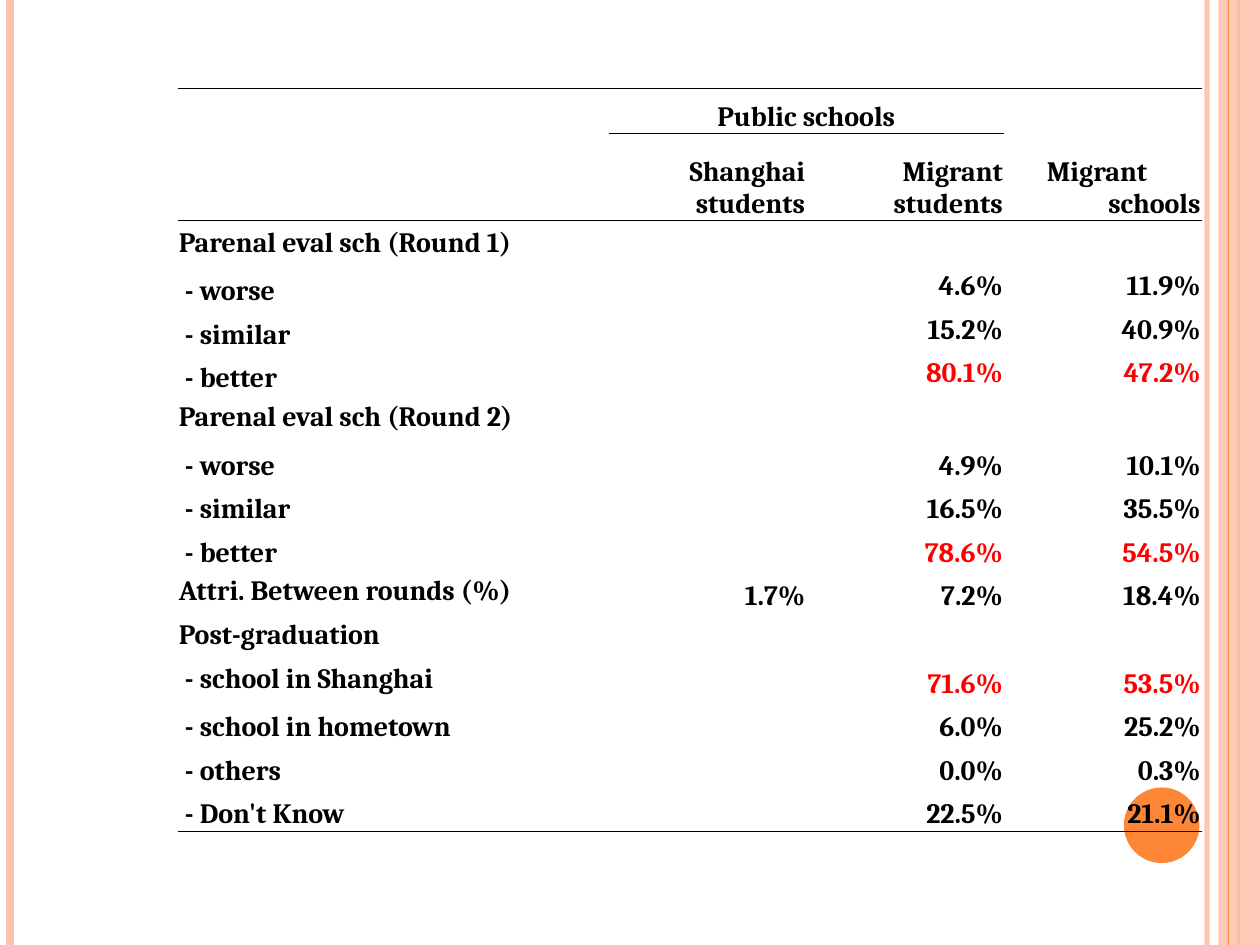
from lxml import etree
from pptx import Presentation
from pptx.dml.color import RGBColor
from pptx.enum.shapes import MSO_CONNECTOR, MSO_SHAPE
from pptx.enum.text import MSO_ANCHOR, PP_ALIGN
from pptx.oxml.ns import qn
from pptx.util import Inches, Pt

STRAIGHT = MSO_CONNECTOR.STRAIGHT
RECTANGLE, OVAL = MSO_SHAPE.RECTANGLE, MSO_SHAPE.OVAL
MIDDLE, BOTTOM = MSO_ANCHOR.MIDDLE, MSO_ANCHOR.BOTTOM
LEFT, CENTER, RIGHT = PP_ALIGN.LEFT, PP_ALIGN.CENTER, PP_ALIGN.RIGHT

COLORS = {"text": "000000", "highlight": "FF0000", "orange": "FE8637", "peach": "FEC3AE"}
FONT = "Cambria"
BLANK_LAYOUT = 6
THIN, MEDIUM = 0.5, 1

COLUMN_WIDTHS = [3.42, 1.57, 1.57, 1.57]
HEADER_HEIGHTS = [0.36, 0.69]
BODY_HEIGHT = 4.85

# Label, label anchor, values by school type, value anchor, value colour
BODY_ROWS = [
    ("Parenal eval sch (Round 1)", MIDDLE, ("", "", ""), MIDDLE, "text"),
    (" - worse", BOTTOM, ("", "4.6%", "11.9%"), MIDDLE, "text"),
    (" - similar", BOTTOM, ("", "15.2%", "40.9%"), MIDDLE, "text"),
    (" - better", BOTTOM, ("", "80.1%", "47.2%"), MIDDLE, "highlight"),
    ("Parenal eval sch (Round 2)", MIDDLE, ("", "", ""), BOTTOM, "text"),
    (" - worse", BOTTOM, ("", "4.9%", "10.1%"), BOTTOM, "text"),
    (" - similar", BOTTOM, ("", "16.5%", "35.5%"), BOTTOM, "text"),
    (" - better", BOTTOM, ("", "78.6%", "54.5%"), BOTTOM, "highlight"),
    ("Attri. Between rounds (%)", MIDDLE, ("1.7%", "7.2%", "18.4%"), BOTTOM, "text"),
    ("Post-graduation", MIDDLE, ("", "", ""), BOTTOM, "text"),
    (" - school in Shanghai", MIDDLE, ("", "71.6%", "53.5%"), BOTTOM, "highlight"),
    (" - school in hometown", BOTTOM, ("", "6.0%", "25.2%"), BOTTOM, "text"),
    (" - others", BOTTOM, ("", "0.0%", "0.3%"), BOTTOM, "text"),
    (" - Don't Know", BOTTOM, ("", "22.5%", "21.1%"), BOTTOM, "text"),
]


def rgb(name):
    return RGBColor.from_string(COLORS[name])


def set_opacity(fill_parent, percent):
    color = fill_parent.find(".//" + qn("a:srgbClr"))
    etree.SubElement(color, qn("a:alpha"), val=str(percent * 1000))


def add_vertical_line(slide, x, color, width, opacity=100):
    line = slide.shapes.add_connector(STRAIGHT, Inches(x), 0, Inches(x), Inches(7.5))
    line.line.color.rgb = rgb(color)
    line.line.width = Pt(width)
    properties = line._element.spPr
    if opacity < 100:
        set_opacity(properties, opacity)
    etree.SubElement(properties, qn("a:effectLst"))


def add_plain_shape(slide, kind, left, top, width, height, color, opacity=100):
    shape = slide.shapes.add_shape(
        kind, Inches(left), Inches(top), Inches(width), Inches(height))
    shape.shadow.inherit = False
    shape.fill.solid()
    shape.fill.fore_color.rgb = rgb(color)
    shape.line.fill.background()
    if opacity < 100:
        set_opacity(shape._element.spPr, opacity)


def add_decoration(slide):
    add_vertical_line(slide, 9.58, "peach", 3, opacity=93)
    add_vertical_line(slide, 0.08, "peach", 4.5)
    add_vertical_line(slide, 9.83, "orange", 1.5)
    add_plain_shape(slide, RECTANGLE, 9.67, 0, 0.33, 7.5, "peach", opacity=87)
    add_vertical_line(slide, 9.75, "orange", 0.75)
    add_plain_shape(slide, OVAL, 8.92, 6.25, 0.6, 0.6, "orange")


def set_borders(cell, top, bottom):
    """Draw the top and bottom rules of a cell; a width of 0 means no line."""
    properties = cell._tc.get_or_add_tcPr()
    sides = [("a:lnL", 0), ("a:lnR", 0), ("a:lnT", top), ("a:lnB", bottom)]
    for position, (tag, width) in enumerate(sides):
        border = etree.Element(qn(tag), w=str(Pt(width)))
        if width:
            fill = etree.SubElement(border, qn("a:solidFill"))
            etree.SubElement(fill, qn("a:srgbClr"), val=COLORS["text"])
        else:
            etree.SubElement(border, qn("a:noFill"))
        properties.insert(position, border)


def add_text(paragraph, text, alignment, color="text"):
    paragraph.alignment = alignment
    run = paragraph.add_run()
    run.text = text
    run.font.name = FONT
    run.font.size = Pt(16)
    run.font.bold = True
    run.font.color.rgb = rgb(color)


def fill_cell(cell, text, alignment, anchor, color="text"):
    cell.vertical_anchor = anchor
    if text:
        add_text(cell.text_frame.paragraphs[0], text, alignment, color)


def fill_header(table):
    table.cell(0, 0).merge(table.cell(1, 0))
    table.cell(0, 1).merge(table.cell(0, 2))
    table.cell(0, 3).merge(table.cell(1, 3))
    fill_cell(table.cell(0, 1), "Public schools", CENTER, BOTTOM)
    fill_cell(table.cell(1, 1), "Shanghai students", RIGHT, BOTTOM)
    fill_cell(table.cell(1, 2), "Migrant students", RIGHT, BOTTOM)

    # Staggered heading: first line indented from the left, second flush right
    heading = table.cell(0, 3)
    fill_cell(heading, "Migrant", LEFT, BOTTOM)
    first_line = heading.text_frame.paragraphs[0]
    first_line._p.get_or_add_pPr().set("marL", str(Inches(0.33)))
    add_text(heading.text_frame.add_paragraph(), "schools", RIGHT)


def fill_body(table):
    first_row = len(HEADER_HEIGHTS)
    for row, (label, label_anchor, values, anchor, color) in enumerate(BODY_ROWS, first_row):
        fill_cell(table.cell(row, 0), label, LEFT, label_anchor)
        for column, value in enumerate(values, 1):
            fill_cell(table.cell(row, column), value, RIGHT, anchor, color)


def style_cells(table):
    last_row = len(table.rows) - 1
    # Widths of the rules lying under a row, with -1 for the table's top edge
    rules = {-1: THIN, 1: THIN, last_row: THIN}
    for row in range(last_row + 1):
        for column in range(len(COLUMN_WIDTHS)):
            cell = table.cell(row, column)
            cell.margin_left = cell.margin_right = cell.margin_top = Inches(0.01)
            cell.margin_bottom = 0
            cell.fill.background()
            top, bottom = rules.get(row - 1, 0), rules.get(row, 0)
            if column in (1, 2):
                top = MEDIUM if row == 1 else top
                bottom = MEDIUM if row == 0 else bottom
            elif row == 0:
                bottom = THIN
            set_borders(cell, top, bottom)


def add_survey_table(slide):
    row_heights = HEADER_HEIGHTS + [BODY_HEIGHT / len(BODY_ROWS)] * len(BODY_ROWS)
    frame = slide.shapes.add_table(
        len(row_heights), len(COLUMN_WIDTHS), Inches(1.41), Inches(0.7),
        Inches(sum(COLUMN_WIDTHS)), Inches(sum(row_heights)))
    table = frame.table
    table.first_row = table.horz_banding = False
    for column, width in zip(table.columns, COLUMN_WIDTHS):
        column.width = Inches(width)
    for row, height in zip(table.rows, row_heights):
        row.height = Inches(height)
    fill_header(table)
    fill_body(table)
    style_cells(table)


def main():
    presentation = Presentation()
    presentation.slide_width = Inches(10)
    presentation.slide_height = Inches(7.5)
    slide = presentation.slides.add_slide(presentation.slide_layouts[BLANK_LAYOUT])
    add_decoration(slide)
    add_survey_table(slide)
    presentation.save("out.pptx")


if __name__ == "__main__":
    main()
